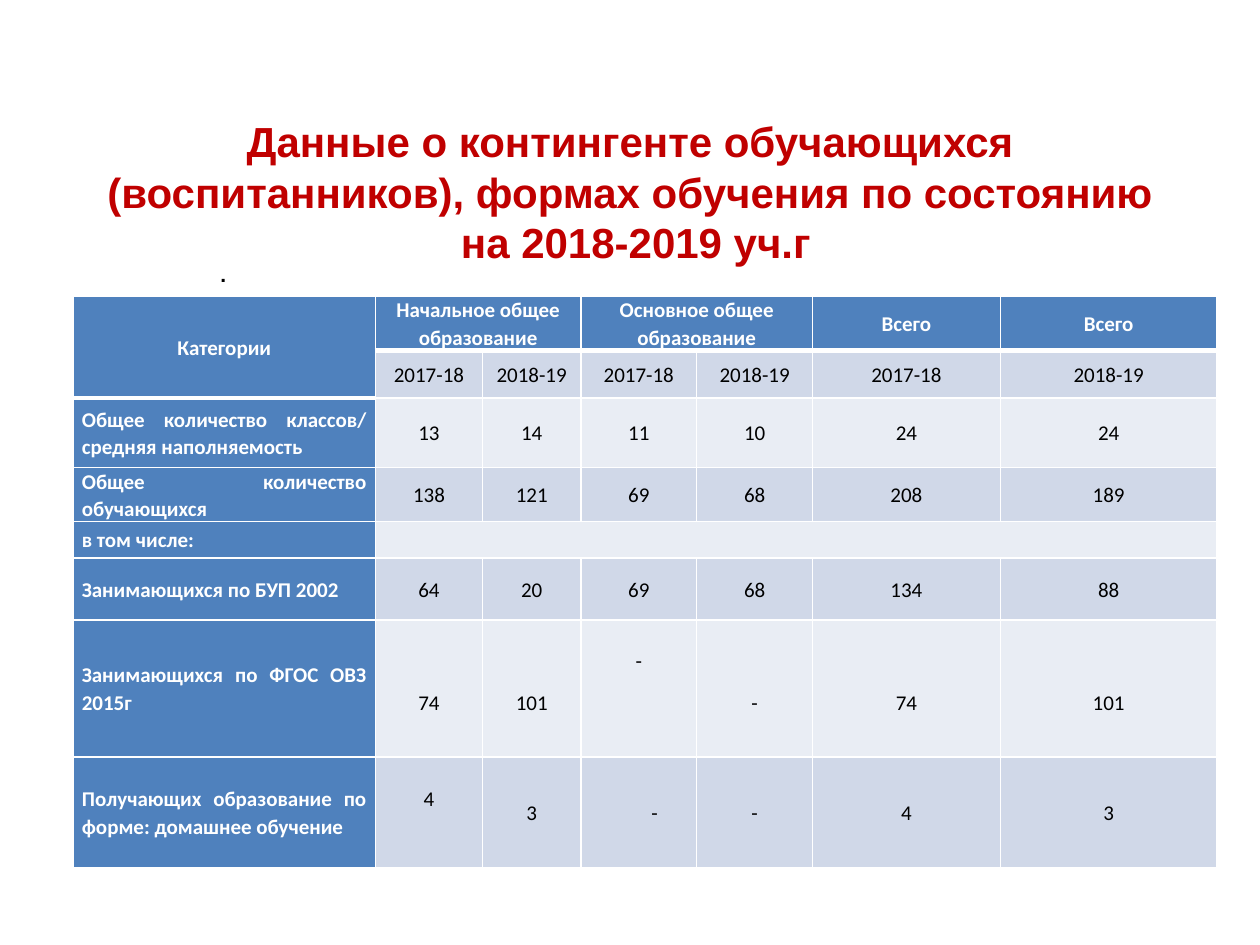
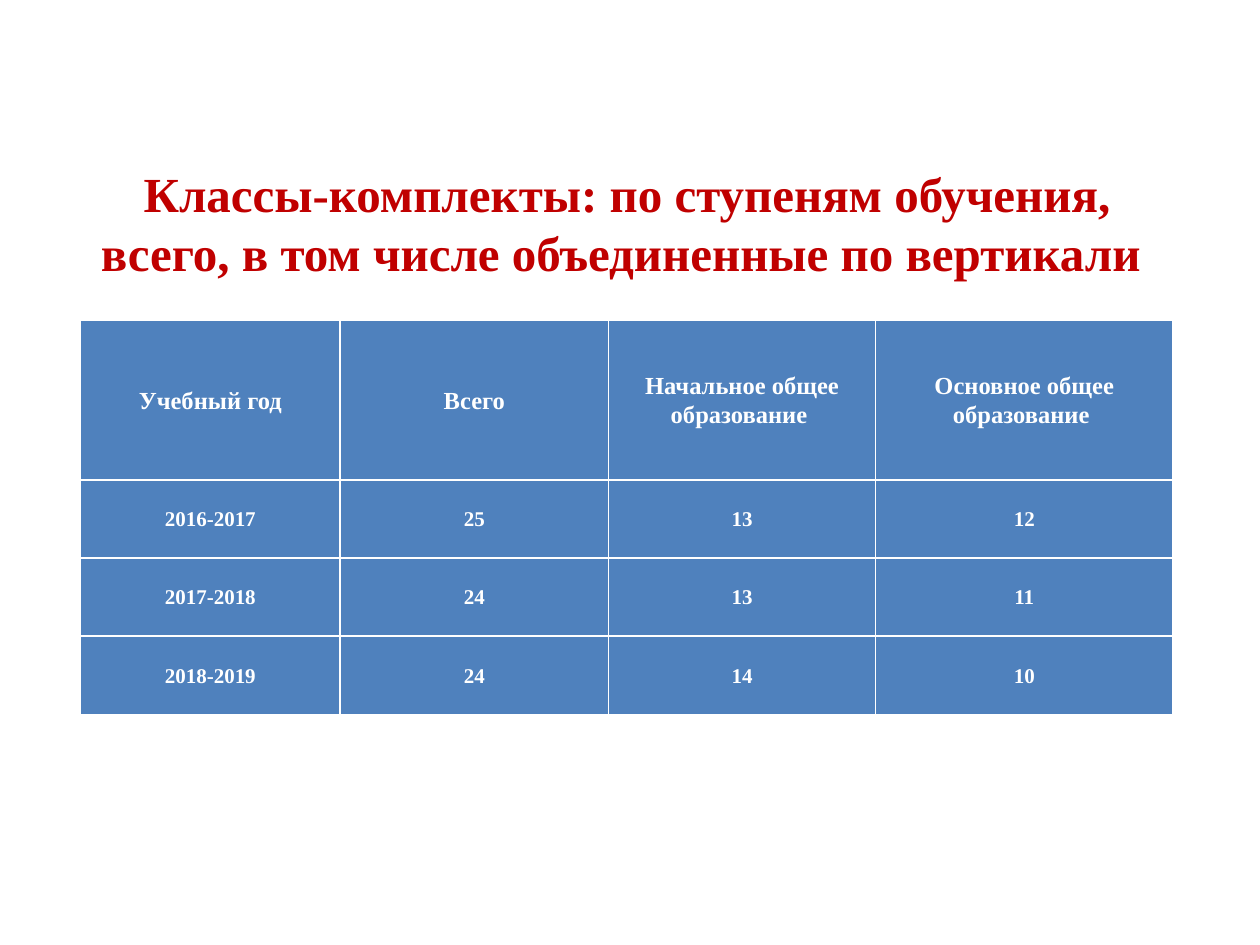
from lxml import etree
from pptx import Presentation
from pptx.dml.color import RGBColor
from pptx.enum.text import MSO_ANCHOR, PP_ALIGN
from pptx.oxml.ns import qn
from pptx.util import Inches, Pt

MID = MSO_ANCHOR.MIDDLE
LEFT, MIDDLE, JUST = PP_ALIGN.LEFT, PP_ALIGN.CENTER, PP_ALIGN.JUSTIFY
HUES = {"title": "C00000", "head": "4F81BD", "dark": "D0D8E8",
        "light": "E9EDF4", "white": "FFFFFF", "black": "000000"}


def style(para, font, size, hue, bold=True, align=MIDDLE):
    para.alignment = align
    for run in para.runs:
        run.font.name, run.font.size, run.font.bold = font, Pt(size), bold
        run.font.color.rgb = RGBColor.from_string(HUES[hue])


def add_grid(slide, left, top, cols, rows, pad):
    """Add a table with white rules; return it with its cells padded."""
    grid = slide.shapes.add_table(len(rows), len(cols), Inches(left), Inches(top),
                                  Inches(sum(cols)), Inches(sum(rows))).table
    for col, width in zip(grid.columns, cols):
        col.width = Inches(width)
    for row, height in zip(grid.rows, rows):
        row.height = Inches(height)
    for cell in grid.iter_cells():
        cell.vertical_anchor = MID
        cell.margin_left = cell.margin_right = Inches(pad)
        cell.margin_top = cell.margin_bottom = 0
        para = cell.text_frame.paragraphs[0]
        para.line_spacing = 1.07
        para._p.get_or_add_endParaRPr().set("sz", "1200")
        props = cell._tc.get_or_add_tcPr()
        for side in ("lnL", "lnR", "lnT", "lnB"):
            line = etree.SubElement(props, qn("a:" + side), w=str(Pt(1)))
            fill = etree.SubElement(line, qn("a:solidFill"))
            etree.SubElement(fill, qn("a:srgbClr"), val=HUES["white"])
    return grid


deck = Presentation()
deck.slide_width, deck.slide_height = Inches(10), Inches(7.5)
blank = deck.slide_layouts[6]
first, second = deck.slides.add_slide(blank), deck.slides.add_slide(blank)

# Titles and the lone dot
labels = [
    (first, 0.5, 0.92, 9, 1.25, 0, "Arial", 24, "title", MIDDLE,
     "Данные о контингенте обучающихся (воспитанников), "
     "формах обучения по состоянию\v на 2018-2019 уч.г"),
    (first, 1.65, 1.84, 0.25, 0.67, 0.08, "Arial", 12, "black", LEFT, "."),
    (second, 0.64, 1.25, 8.67, 1.04, 0.05, "Times New Roman", 28, "title", MIDDLE,
     "Классы-комплекты: по ступеням обучения, всего, "
     "в том числе объединенные по вертикали "),
]
for slide, left, top, width, height, pad, font, size, hue, align, text in labels:
    box = slide.shapes.add_textbox(Inches(left), Inches(top), Inches(width), Inches(height))
    frame = box.text_frame
    frame.word_wrap = text != "."
    frame.margin_top = frame.margin_bottom = Inches(pad)
    if text == ".":
        frame.vertical_anchor = MID
    frame.text = text
    style(frame.paragraphs[0], font, size, hue, align=align)

# Pupil table
years = ["2017-18", "2018-19"]
pupils = [
    ["Категории", "Начальное общее образование", "",
     "Основное общее образование", "", "Всего", "Всего"],
    [""] + years * 3,
    ["Общее количество классов/ средняя наполняемость", "13", "14", "11", "10", "24", "24"],
    ["Общее количество обучающихся", "138", "121", "69", "68", "208", "189"],
    ["в том числе:"] + [""] * 6,
    ["Занимающихся по БУП 2002", "64", "20", "69", "68", "134", "88"],
    ["Занимающихся по ФГОС ОВЗ 2015г", "74", "101", "-", "-", "74", "101"],
    ["Получающих образование по форме: домашнее обучение", "4", "3", "-", "-", "4", "3"],
]
grid = add_grid(first, 0.58, 2.35, [2.4, 0.85, 0.78, 0.92, 0.92, 1.49, 1.72],
                [0.43, 0.38, 0.55, 0.43, 0.29, 0.49, 1.09, 0.88], 0.07)
for r, row in enumerate(pupils):
    for c, text in enumerate(row):
        cell = grid.cell(r, c)
        head = r == 0 or c == 0
        band = "head" if head else "dark" if r % 2 else "light"
        cell.fill.solid()
        cell.fill.fore_color.rgb = RGBColor.from_string(HUES[band])
        # Thick rule under the header, which is two rows deep in column 0
        edge = 2 if c == 0 else 1
        for side, at in (("lnB", edge - 1), ("lnT", edge)):
            if r == at or (side == "lnB" and r == 0):
                cell._tc.tcPr.find(qn("a:" + side)).set("w", str(Pt(3)))
        if text:
            para = cell.text_frame.paragraphs[0]
            para.text = text
            style(para, "Calibri", 12, "white" if head else "black", head,
                  JUST if c == 0 and r else MIDDLE)

for r, c, last, end in [(0, 0, 1, 0), (0, 1, 0, 2), (0, 3, 0, 4), (4, 1, 4, 6)]:
    grid.cell(r, c).merge(grid.cell(last, end))

# Figures set off the middle of their cells
for c in (1, 2, 4, 5, 6):
    grid.cell(6, c).margin_top = Inches(0.22)
grid.cell(6, 3).margin_bottom = Inches(0.44)
grid.cell(7, 1).margin_bottom = Inches(0.22)
grid.cell(7, 3).margin_left = Inches(0.32)

# Class table
classes = [
    ["Учебный год", "Всего", "Начальное общее образование ", "Основное общее образование "],
    ["2016-2017", "25", "13", "12"],
    ["2017-2018", "24", "13", "11"],
    ["2018-2019", "24", "14", "10"],
]
grid = add_grid(second, 0.64, 2.54, [2.06, 2.13, 2.12, 2.36], [1.27] + [0.62] * 3, 0.03)
for r, row in enumerate(classes):
    for c, text in enumerate(row):
        cell = grid.cell(r, c)
        cell.fill.solid()
        cell.fill.fore_color.rgb = RGBColor.from_string(HUES["head"])
        para = cell.text_frame.paragraphs[0]
        para.text = text
        style(para, "Times New Roman", 12 if r else 14, "white")

deck.save("out.pptx")
